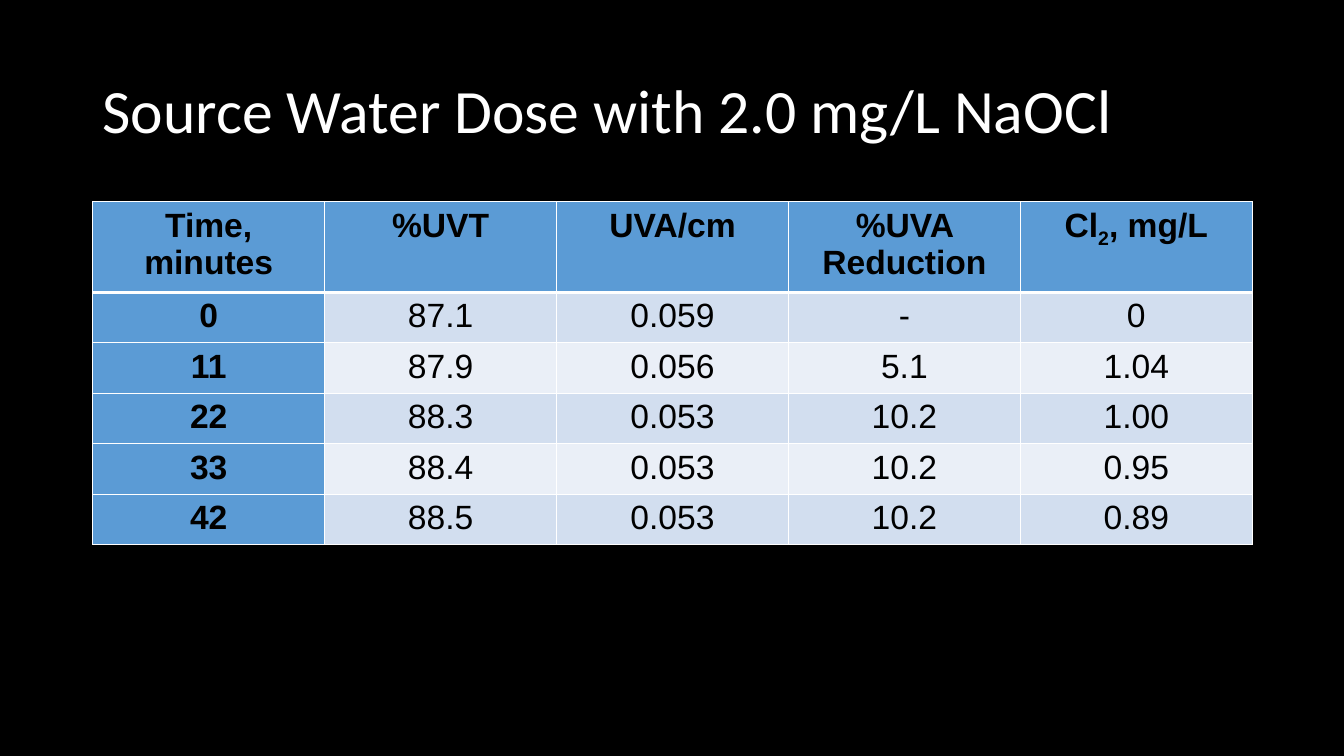
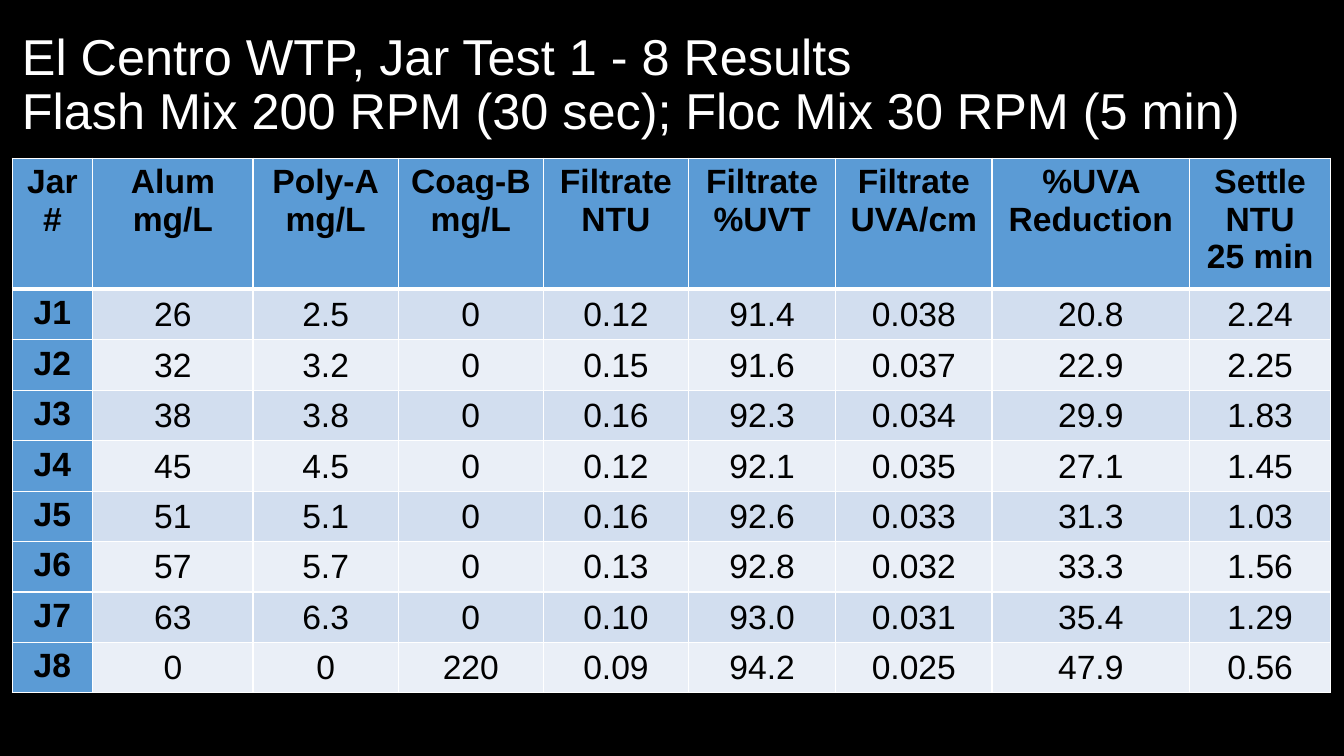
from lxml.etree import SubElement
from pptx import Presentation
from pptx.dml.color import RGBColor
from pptx.enum.text import MSO_ANCHOR as Anchor, PP_ALIGN as Align
from pptx.oxml.ns import qn
from pptx.util import Inches, Pt

COLORS = {
    "background": "000000",
    "title": "FFFFFF",
    "text": "000000",
    "border": "FFFFFF",
    "header": "5B9BD5",
    "odd": "D2DEEF",
    "even": "EAEFF7",
}


def color(name):
    return RGBColor.from_string(COLORS[name])


class Deck:
    """Holds the shared style and the current slide."""

    BODY_FONT = "Arial"
    BODY_SIZE = 24
    ROW_HEIGHT = 0.47
    THIN, THICK = 1, 3

    def __init__(self):
        self.presentation = Presentation()
        self.presentation.slide_width = Inches(13.33)
        self.presentation.slide_height = Inches(7.5)
        self.slide = None

    def new_slide(self):
        self.slide = self.presentation.slides.add_slide(self.presentation.slide_layouts[6])
        fill = self.slide.background.fill
        fill.solid()
        fill.fore_color.rgb = color("background")

    def style(self, paragraph, font, size, color_name, bold=False):
        paragraph.font.name = font
        paragraph.font.size = Pt(size)
        paragraph.font.bold = bold
        paragraph.font.color.rgb = color(color_name)

    def title(self, text, left, top, width, font, size):
        shape = self.slide.shapes.add_textbox(
            Inches(left), Inches(top), Inches(width), Inches(1.45))
        frame = shape.text_frame
        frame.word_wrap = True
        frame.vertical_anchor = Anchor.MIDDLE
        paragraph = frame.paragraphs[0]
        paragraph.text = text
        paragraph.line_spacing = 0.9
        self.style(paragraph, font, size, "title")

    def borders(self, cell, row):
        """Thin white lines, with a thick one under the header row."""
        properties = cell._tc.get_or_add_tcPr()
        widths = {
            "a:lnL": self.THIN,
            "a:lnR": self.THIN,
            "a:lnT": self.THICK if row == 1 else self.THIN,
            "a:lnB": self.THICK if row == 0 else self.THIN,
        }
        for tag, width in widths.items():
            line = SubElement(properties, qn(tag), w=str(Pt(width)))
            fill = SubElement(line, qn("a:solidFill"))
            SubElement(fill, qn("a:srgbClr"), val=COLORS["border"])

    def cell(self, cell, text, row, column, compact):
        is_heading = row == 0 or column == 0
        self.borders(cell, row)
        cell.fill.solid()
        cell.fill.fore_color.rgb = color(
            "header" if is_heading else "odd" if row % 2 else "even")
        if compact and not is_heading:
            cell.vertical_anchor = Anchor.MIDDLE
            cell.margin_left = cell.margin_right = cell.margin_top = Inches(0.01)
            cell.margin_bottom = 0
        frame = cell.text_frame
        for index, line in enumerate(text.split("\n")):
            paragraph = frame.add_paragraph() if index else frame.paragraphs[0]
            paragraph.alignment = Align.CENTER
            self.style(paragraph, self.BODY_FONT, self.BODY_SIZE, "text", is_heading)
            # Text between tildes is subscript
            for part, piece in enumerate(line.split("~")):
                run = paragraph.add_run()
                run.text = piece
                if part % 2:
                    run._r.get_or_add_rPr().set("baseline", "-25000")

    def table(self, rows, left, top, widths, header_height, compact=False):
        heights = [header_height] + [self.ROW_HEIGHT] * (len(rows) - 1)
        table = self.slide.shapes.add_table(
            len(rows), len(widths), Inches(left), Inches(top),
            Inches(sum(widths)), Inches(sum(heights))).table
        table.first_col = True
        for column, width in zip(table.columns, widths):
            column.width = Inches(width)
        for row, height in zip(table.rows, heights):
            row.height = Inches(height)
        for row, texts in enumerate(rows):
            for column, text in enumerate(texts):
                self.cell(table.cell(row, column), text, row, column, compact)


DOSE_ROWS = [
    ["Time, minutes", "%UVT", "UVA/cm", "%UVA Reduction", "Cl~2~, mg/L"],
    ["0", "87.1", "0.059", "-", "0"],
    ["11", "87.9", "0.056", "5.1", "1.04"],
    ["22", "88.3", "0.053", "10.2", "1.00"],
    ["33", "88.4", "0.053", "10.2", "0.95"],
    ["42", "88.5", "0.053", "10.2", "0.89"],
]

JAR_ROWS = [
    ["Jar #", "Alum\nmg/L", "Poly-A\nmg/L", "Coag-B\nmg/L", "Filtrate\nNTU",
     "Filtrate\n%UVT", "Filtrate\nUVA/cm", "%UVA Reduction", "Settle\nNTU\n25 min"],
    ["J1", "26", "2.5", "0", "0.12", "91.4", "0.038", "20.8", "2.24"],
    ["J2", "32", "3.2", "0", "0.15", "91.6", "0.037", "22.9", "2.25"],
    ["J3", "38", "3.8", "0", "0.16", "92.3", "0.034", "29.9", "1.83"],
    ["J4", "45", "4.5", "0", "0.12", "92.1", "0.035", "27.1", "1.45"],
    ["J5", "51", "5.1", "0", "0.16", "92.6", "0.033", "31.3", "1.03"],
    ["J6", "57", "5.7", "0", "0.13", "92.8", "0.032", "33.3", "1.56"],
    ["J7", "63", "6.3", "0", "0.10", "93.0", "0.031", "35.4", "1.29"],
    ["J8", "0", "0", "220", "0.09", "94.2", "0.025", "47.9", "0.56"],
]


def main():
    deck = Deck()

    # Source water dose
    deck.new_slide()
    deck.title("Source Water Dose with 2.0 mg/L NaOCl", 0.92, 0.4, 11.5, "Calibri", 44)
    deck.table(DOSE_ROWS, 0.92, 2, [2.3] * 5, 0.84)

    # Jar test results
    deck.new_slide()
    deck.title("El Centro WTP, Jar Test 1 - 8 Results\v"
               "Flash Mix 200 RPM (30 sec); Floc Mix 30 RPM (5 min)",
               0.12, 0.13, 13.03, "Arial", 36)
    deck.table(JAR_ROWS, 0.12, 1.57,
               [0.8, 1.59, 1.44, 1.44, 1.44, 1.46, 1.55, 1.96, 1.4], 1.22, compact=True)

    deck.presentation.save("out.pptx")


if __name__ == "__main__":
    main()
